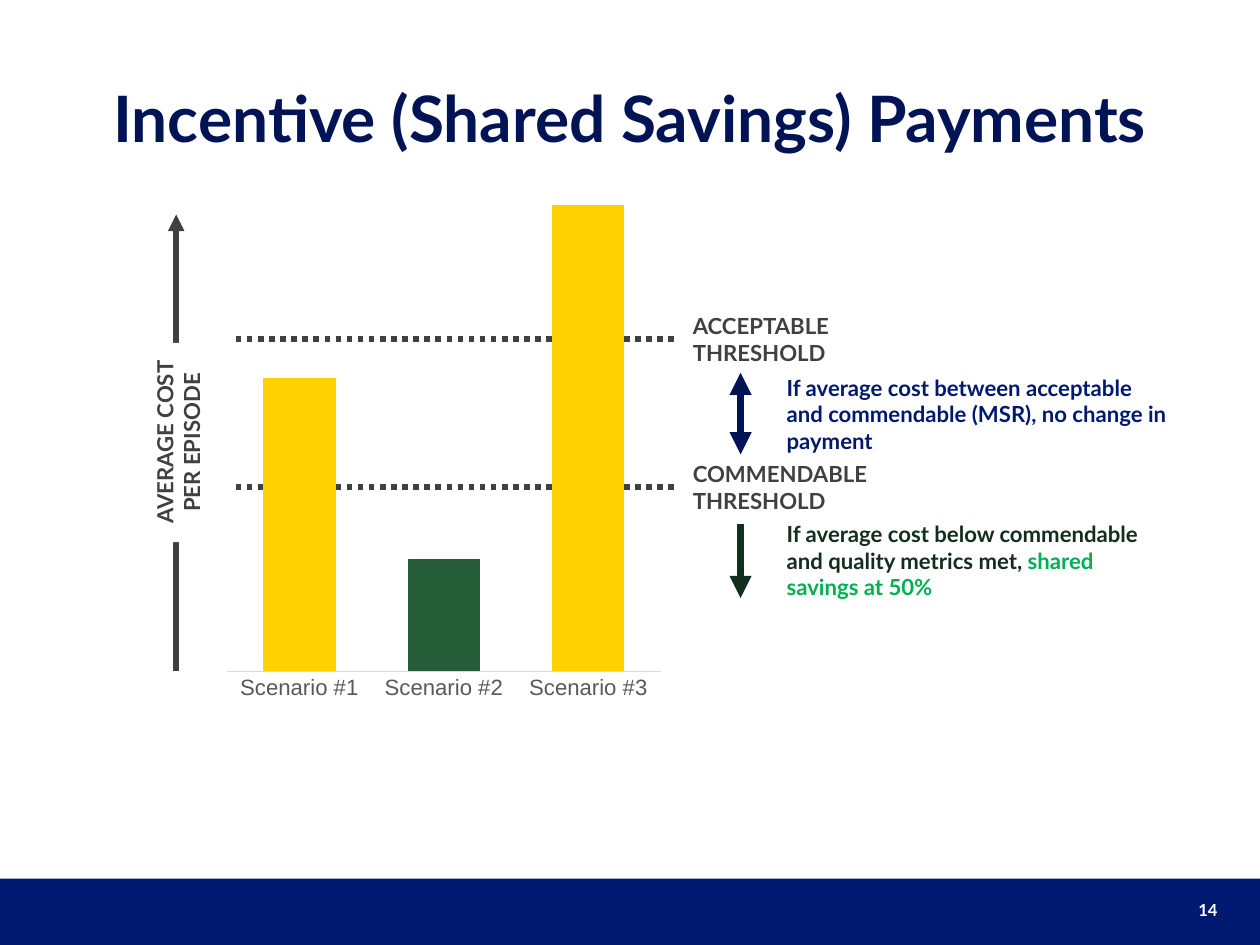
from dataclasses import dataclass

from lxml import etree
from pptx import Presentation
from pptx.chart.chart import Chart
from pptx.chart.data import CategoryChartData
from pptx.dml.color import RGBColor
from pptx.dml.fill import FillFormat
from pptx.enum.chart import XL_CHART_TYPE, XL_TICK_MARK
from pptx.enum.dml import MSO_LINE
from pptx.enum.shapes import MSO_CONNECTOR, MSO_SHAPE
from pptx.enum.text import MSO_ANCHOR, PP_ALIGN
from pptx.oxml import parse_xml
from pptx.oxml.ns import nsdecls, qn
from pptx.shapes.autoshape import Shape
from pptx.slide import Slide
from pptx.text.text import Font
from pptx.util import Cm, Pt

LEFT, CENTER, RIGHT = PP_ALIGN.LEFT, PP_ALIGN.CENTER, PP_ALIGN.RIGHT
MIDDLE = MSO_ANCHOR.MIDDLE
RECTANGLE = MSO_SHAPE.RECTANGLE
STRAIGHT = MSO_CONNECTOR.STRAIGHT
DOTTED = MSO_LINE.ROUND_DOT
COLUMNS = XL_CHART_TYPE.COLUMN_CLUSTERED
NO_TICK = XL_TICK_MARK.NONE

SLIDE_WIDTH, SLIDE_HEIGHT = 36.12, 27.1
FOOTER_TOP = 25.2
BLUE, NAVY, GREY, WHITE = "001970", "001354", "404040", "FFFFFF"
YELLOW, GREEN, DARK_GREEN, BRIGHT_GREEN = "FFD100", "245D38", "122E1C", "00B050"
ACCEPTABLE_Y, COMMENDABLE_Y = 9.72, 13.97
AXIS_X, RULE_X = 5.05, 21.23


@dataclass(frozen=True)
class Box:
    left: float
    top: float
    width: float
    height: float


@dataclass(frozen=True)
class Span:
    text: str
    color: str


@dataclass(frozen=True)
class Label:
    box: Box
    lines: list[list[Span]]
    size: float = 18
    align: PP_ALIGN = LEFT
    inset: bool = True


@dataclass(frozen=True)
class Rule:
    start: tuple[float, float]
    end: tuple[float, float]
    color: str
    width: float
    heads: tuple[str, ...] = ()
    dotted: bool = False


@dataclass(frozen=True)
class Scenario:
    name: str
    cost: int
    color: str


def threshold_label(word: str, y: float, width: float) -> Label:
    return Label(Box(19.61, y - 0.51, width, 1.02),
                 [[Span(word, GREY)], [Span("THRESHOLD", GREY)]])


THRESHOLDS = [
    Rule((6.76, y), (19.46, y), GREY, 4.5, dotted=True)
    for y in (COMMENDABLE_Y, ACCEPTABLE_Y)
]
COST_AXIS = Rule((AXIS_X, 19.25), (AXIS_X, 6.15), GREY, 4.5, ("tailEnd",))
PAYMENT_ARROWS = [
    Rule((RULE_X, 13.03), (RULE_X, 10.69), NAVY, 6, ("headEnd", "tailEnd")),
    Rule((RULE_X, 17.15), (RULE_X, 15.04), DARK_GREEN, 6, ("headEnd",)),
]
COST_LABEL = Label(Box(2.24, 11.79, 5.72, 1.8),
                   [[Span("AVERAGE COST PER EPISODE", GREY)]], align=CENTER)
LABELS = [
    Label(Box(29.18, 25.37, 5.97, 1.45), [[Span("14", WHITE)]], 13.5, RIGHT),
    Label(Box(0.91, 1.73, 34.29, 3.23),
          [[Span("Incentive (Shared Savings) Payments", NAVY)]], 52, CENTER, False),
    threshold_label("ACCEPTABLE", ACCEPTABLE_Y, 8.1),
    threshold_label("COMMENDABLE", COMMENDABLE_Y, 8.79),
    Label(Box(22.3, 10.59, 11.43, 2.57),
          [[Span("If average cost between acceptable and commendable (MSR), "
                 "no change in payment", BLUE)]]),
    Label(Box(22.3, 14.78, 11.43, 2.57),
          [[Span("If average cost below commendable and quality metrics met, ", DARK_GREEN),
            Span("shared savings at 50%", BRIGHT_GREEN)]]),
]
CHART_BOX = Box(6.25, 4.65, 13.08, 16.05)
PLOT_LAYOUT = {"x": 0.02, "y": 0.02, "w": 0.95, "h": 0.89}
SCENARIOS = [
    Scenario("Scenario #1", 63, YELLOW),
    Scenario("Scenario #2", 24, GREEN),
    Scenario("Scenario #3", 100, YELLOW),
]


def rgb(color: str) -> RGBColor:
    return RGBColor.from_string(color)


def paint(fill: FillFormat, color: str) -> None:
    fill.solid()
    fill.fore_color.rgb = rgb(color)


def style_font(font: Font, name: str, size: float, color: str, bold: bool) -> None:
    font.name, font.size, font.bold = name, Pt(size), bold
    font.color.rgb = rgb(color)


def place(box: Box) -> tuple[Cm, Cm, Cm, Cm]:
    return Cm(box.left), Cm(box.top), Cm(box.width), Cm(box.height)


def add_rectangle(slide: Slide, box: Box, color: str) -> Shape:
    rectangle = slide.shapes.add_shape(RECTANGLE, *place(box))
    rectangle.shadow.inherit = False
    paint(rectangle.fill, color)
    rectangle.line.fill.background()
    return rectangle


def write(holder: Shape, label: Label) -> None:
    frame = holder.text_frame
    frame.word_wrap = True
    frame.vertical_anchor = MIDDLE
    if not label.inset:
        frame.margin_left = frame.margin_right = 0
        frame.margin_top = frame.margin_bottom = 0
    paragraph = frame.paragraphs[0]
    paragraph.alignment = label.align
    for number, spans in enumerate(label.lines):
        if number:
            paragraph.add_line_break()
        for span in spans:
            run = paragraph.add_run()
            run.text = span.text
            style_font(run.font, "Lato", label.size, span.color, True)


def add_rule(slide: Slide, rule: Rule) -> None:
    points = [Cm(value) for value in (*rule.start, *rule.end)]
    connector = slide.shapes.add_connector(STRAIGHT, *points)
    connector.line.color.rgb = rgb(rule.color)
    connector.line.width = Pt(rule.width)
    if rule.dotted:
        connector.line.dash_style = DOTTED
    outline = connector.line._get_or_add_ln()
    for head in rule.heads:
        etree.SubElement(outline, qn(f"a:{head}"), type="triangle")
    etree.SubElement(connector._element.spPr, qn("a:effectLst"))


def set_plot_area(chart: Chart) -> None:
    no_fill = f'<c:spPr {nsdecls("c", "a")}><a:noFill/><a:ln><a:noFill/></a:ln></c:spPr>'
    chart_part = chart._chartSpace.find(qn("c:chart"))
    chart_part.addnext(parse_xml(no_fill))
    plot_area = chart_part.find(qn("c:plotArea"))
    plot_area.append(parse_xml(no_fill))
    for unused in plot_area.findall(qn("c:layout")):
        plot_area.remove(unused)
    layout = etree.Element(qn("c:layout"))
    manual = etree.SubElement(layout, qn("c:manualLayout"))
    settings = {"layoutTarget": "inner", "xMode": "edge", "yMode": "edge", **PLOT_LAYOUT}
    for key, value in settings.items():
        etree.SubElement(manual, qn(f"c:{key}"), val=str(value))
    plot_area.insert(0, layout)


def add_cost_chart(slide: Slide) -> None:
    costs = CategoryChartData()
    costs.categories = [scenario.name for scenario in SCENARIOS]
    costs.add_series("Series 1", [scenario.cost for scenario in SCENARIOS])
    chart = slide.shapes.add_chart(COLUMNS, *place(CHART_BOX), costs).chart
    style_font(chart.font, "Arial", 10, "000000", False)
    chart.has_legend = chart.has_title = False

    plot = chart.plots[0]
    plot.gap_width, plot.overlap = 100, -27
    plot.vary_by_categories = False
    series = plot.series[0]
    paint(series.format.fill, BLUE)
    for index, scenario in enumerate(SCENARIOS):
        paint(series.points[index].format.fill, scenario.color)

    names = chart.category_axis
    names.major_tick_mark = names.minor_tick_mark = NO_TICK
    names.format.line.color.rgb = rgb("D9D9D9")
    names.format.line.width = Pt(0.75)
    style_font(names.tick_labels.font, "Arial", 18, "595959", False)
    amounts = chart.value_axis
    amounts.minimum_scale, amounts.maximum_scale = 0, 106.8
    amounts.has_major_gridlines = False
    amounts.visible = False
    set_plot_area(chart)


def main() -> None:
    deck = Presentation()
    deck.slide_width, deck.slide_height = Cm(SLIDE_WIDTH), Cm(SLIDE_HEIGHT)
    slide = deck.slides.add_slide(deck.slide_layouts[6])
    add_rectangle(slide, Box(0, FOOTER_TOP, SLIDE_WIDTH, SLIDE_HEIGHT - FOOTER_TOP), BLUE)
    for threshold in THRESHOLDS:
        add_rule(slide, threshold)
    add_cost_chart(slide)
    add_rule(slide, COST_AXIS)
    cost_caption = add_rectangle(slide, COST_LABEL.box, WHITE)
    cost_caption.rotation = 270
    write(cost_caption, COST_LABEL)
    for label in LABELS:
        write(slide.shapes.add_textbox(*place(label.box)), label)
    for arrow in PAYMENT_ARROWS:
        add_rule(slide, arrow)
    deck.save("out.pptx")


if __name__ == "__main__":
    main()
